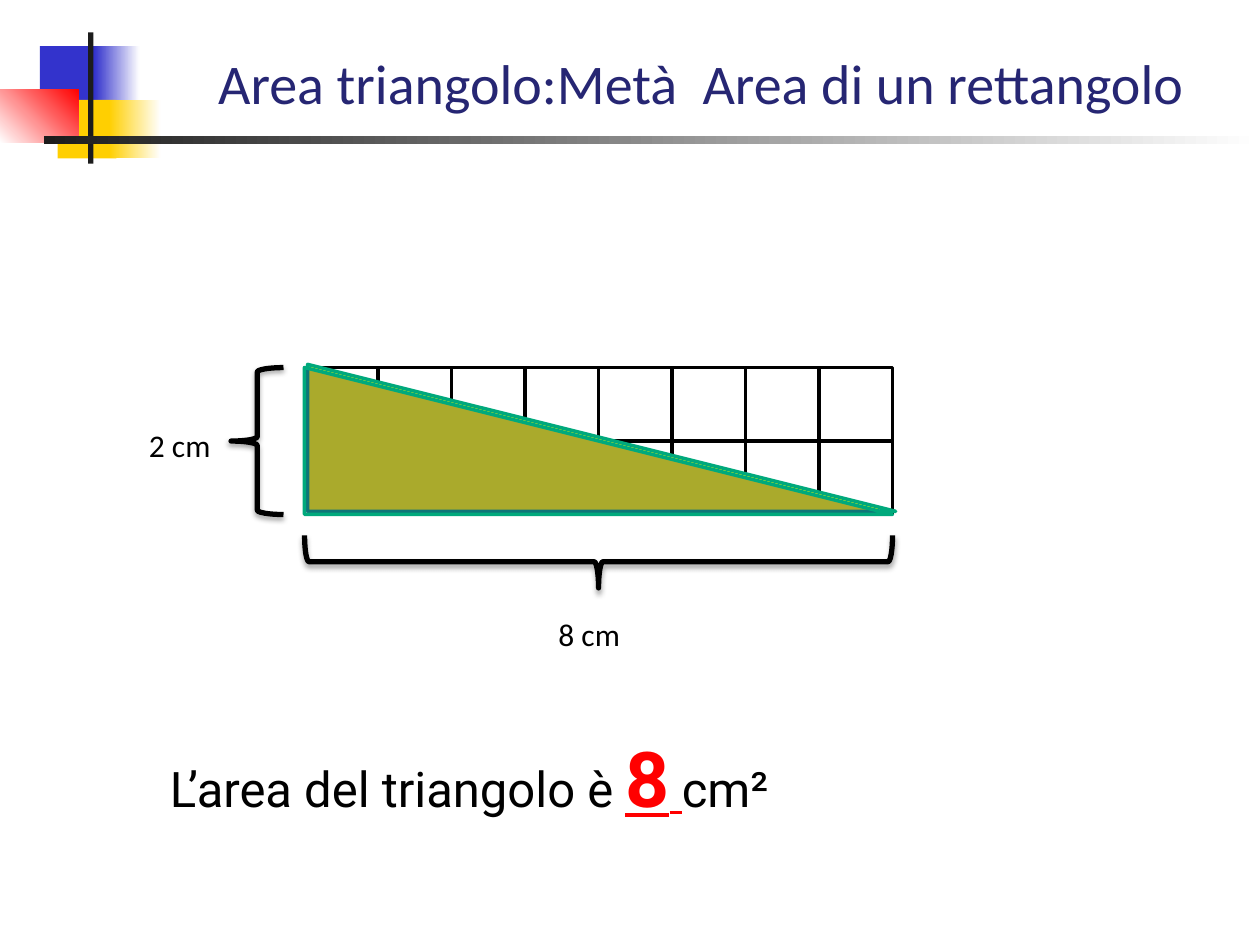
from dataclasses import dataclass
from typing import Any, Optional

from lxml.etree import SubElement
from pptx import Presentation
from pptx.dml.color import RGBColor
from pptx.enum.shapes import MSO_SHAPE
from pptx.enum.text import MSO_AUTO_SIZE
from pptx.oxml.ns import qn
from pptx.util import Emu, Pt

PX = 914400 // 120
BLACK = RGBColor(0x00, 0x00, 0x00)
WHITE = RGBColor(0xFF, 0xFF, 0xFF)
NAVY = RGBColor(0x26, 0x26, 0x73)
BLUE = RGBColor(0x33, 0x33, 0xCC)
GOLD = RGBColor(0xFF, 0xCF, 0x01)
RED = RGBColor(0xFF, 0x00, 0x00)
YELLOW = RGBColor(0xFF, 0xFF, 0x00)
GREEN = RGBColor(0x00, 0xA9, 0x7C)
DARK = RGBColor(0x1C, 0x1C, 0x1C)

CELL, COLS, ROWS = 70, 8, 2
LEFT, TOP = 290, 350
WIDE, HIGH = COLS * CELL, ROWS * CELL


@dataclass
class Box:
    left: int
    top: int
    width: int
    height: int

    def emu(self) -> list[Emu]:
        return [Emu(n * PX) for n in (self.left, self.top, self.width, self.height)]


@dataclass
class Form:
    box: Box
    kind: MSO_SHAPE = MSO_SHAPE.RECTANGLE
    fill: Optional[RGBColor] = None
    fade: Optional[RGBColor] = None
    angle: int = 0
    alpha: int = 100
    line: Optional[RGBColor] = None
    weight: int = 2
    turn: int = 0
    shade: bool = False


@dataclass
class Run:
    text: str
    color: RGBColor
    format: dict[str, Any]


@dataclass
class Label:
    box: Box
    runs: list[Run]


def add_shade(shape: Any) -> None:
    effects = shape.element.spPr.find(qn("a:effectLst"))
    outer = SubElement(effects, qn("a:outerShdw"), blurRad=str(Pt(3.1)),
                       dist=str(Pt(1.8)), dir="5400000", rotWithShape="0")
    color = SubElement(outer, qn("a:srgbClr"), val=str(BLACK))
    SubElement(color, qn("a:alpha"), val="35000")


def draw_form(shapes: Any, form: Form) -> None:
    shape = shapes.add_shape(form.kind, *form.box.emu())
    shape.rotation = form.turn
    shape.shadow.inherit = False
    if form.fill is None:
        shape.fill.background()
    elif form.fade is not None:
        shape.fill.gradient()
        shape.fill.gradient_angle = form.angle
        for stop, color in zip(shape.fill.gradient_stops, (form.fill, form.fade)):
            stop.color.rgb = color
    else:
        shape.fill.solid()
        shape.fill.fore_color.rgb = form.fill
        if form.alpha < 100:
            color = shape.element.spPr.find(qn("a:solidFill")).find(qn("a:srgbClr"))
            SubElement(color, qn("a:alpha"), val=str(form.alpha * 1000))
    if form.line is None:
        shape.line.fill.background()
    else:
        shape.line.color.rgb = form.line
        shape.line.width = Pt(form.weight)
    if form.shade:
        add_shade(shape)


def draw_label(shapes: Any, label: Label) -> None:
    frame = shapes.add_textbox(*label.box.emu()).text_frame
    frame.word_wrap = True
    frame.auto_size = MSO_AUTO_SIZE.SHAPE_TO_FIT_TEXT
    for item in label.runs:
        run = frame.paragraphs[0].add_run()
        run.text = item.text
        for key, value in item.format.items():
            setattr(run.font, key, value)
        run.font.color.rgb = item.color


SMALL = {"name": "Calibri", "size": Pt(18)}
TITLE = {"name": "Calibri", "size": Pt(32)}
BODY = {"name": "Roboto", "size": Pt(28)}
STRONG = BODY | {"bold": True, "underline": True}

GRID = [
    Form(Box(LEFT + col * CELL, TOP + row * CELL, CELL, CELL), fill=WHITE, line=BLACK)
    for row in reversed(range(ROWS)) for col in reversed(range(COLS))
]
HALVES = [
    Form(Box(LEFT + 3, TOP - 3, WIDE, HIGH), MSO_SHAPE.RIGHT_TRIANGLE,
         fill=YELLOW, line=GREEN),
    Form(Box(LEFT, TOP, WIDE, HIGH), MSO_SHAPE.RIGHT_TRIANGLE,
         fill=NAVY, alpha=39, line=GREEN),
]
BRACES = [
    Form(box, MSO_SHAPE.RIGHT_BRACE, line=BLACK, weight=3, turn=turn, shade=True)
    for box, turn in ((Box(220, TOP, 50, HIGH), 180), (Box(545, 255, 50, WIDE), 90))
]
DECOR = [
    Form(Box(38, 44, 59, 56), fill=BLUE),
    Form(Box(90, 44, 43, 56), fill=BLUE, fade=WHITE),
    Form(Box(55, 95, 56, 56), fill=GOLD),
    Form(Box(104, 95, 49, 56), fill=GOLD, fade=WHITE),
    Form(Box(0, 85, 75, 51), fill=WHITE, fade=RED, angle=45),
    Form(Box(84, 31, 5, 125), fill=DARK),
    Form(Box(42, 130, 1158, 7), fill=DARK, fade=WHITE),
]
LABELS = [
    Label(Box(520, 580, 100, 48), [Run("8 cm", BLACK, SMALL)]),
    Label(Box(130, 400, 100, 48), [Run("2 cm", BLACK, SMALL)]),
    Label(Box(150, 690, 870, 101), [
        Run("L’area del triangolo è ", BLACK, BODY),
        Run("8", RED, STRONG | {"size": Pt(44)}),
        Run(" ", RED, STRONG),
        Run("cm²", BLACK, BODY),
    ]),
    Label(Box(196, 40, 1004, 77),
          [Run("Area triangolo:Metà  Area di un rettangolo", NAVY, TITLE)]),
]


def main() -> None:
    deck = Presentation()
    deck.slide_width, deck.slide_height = Emu(1200 * PX), Emu(900 * PX)
    shapes = deck.slides.add_slide(deck.slide_layouts[6]).shapes
    for form in GRID + HALVES + BRACES:
        draw_form(shapes, form)
    group = shapes.add_group_shape()
    for form in DECOR:
        draw_form(group.shapes, form)
    for label in LABELS:
        draw_label(shapes, label)
    deck.save("out.pptx")


if __name__ == "__main__":
    main()
